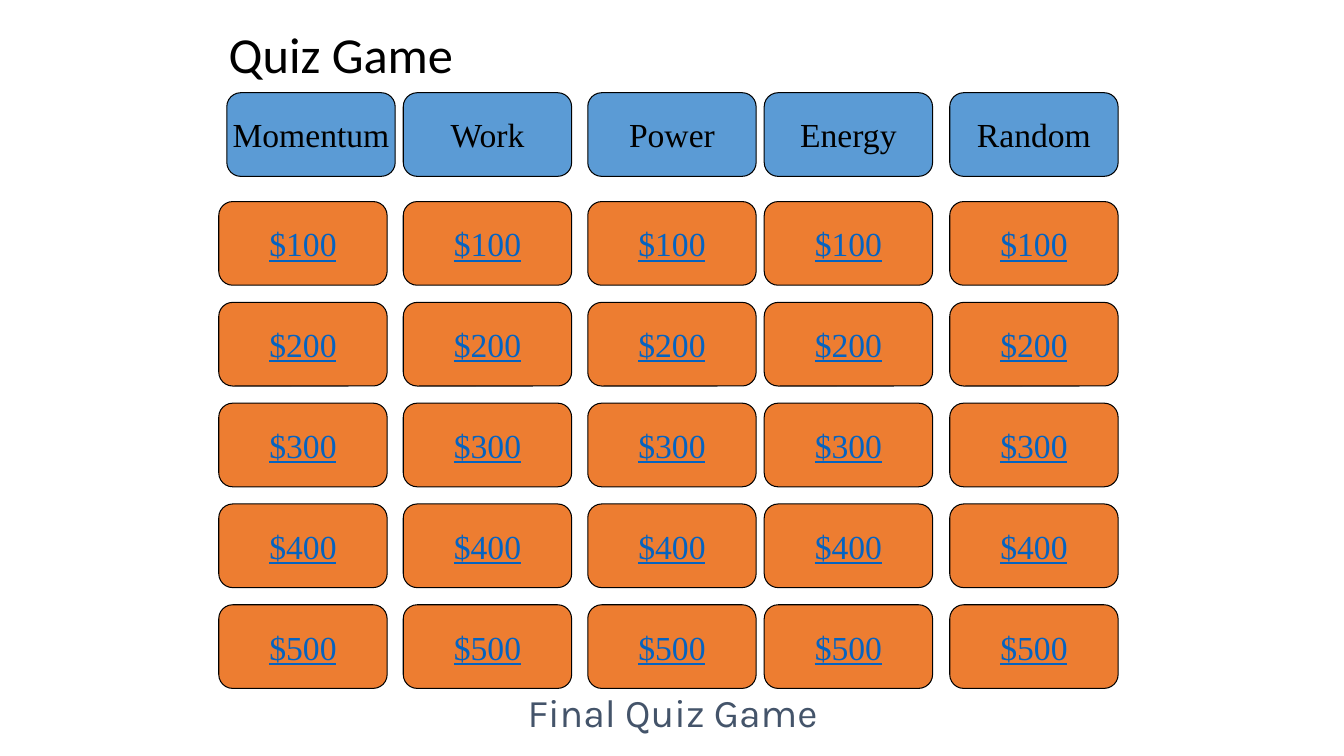
from dataclasses import dataclass

from pptx import Presentation
from pptx.dml.color import RGBColor
from pptx.enum.shapes import MSO_SHAPE
from pptx.enum.text import MSO_ANCHOR, PP_ALIGN
from pptx.slide import Slide
from pptx.text.text import TextFrame
from pptx.util import Inches, Pt

CARD_SHAPE = MSO_SHAPE.FLOWCHART_ALTERNATE_PROCESS
MIDDLE = MSO_ANCHOR.MIDDLE
LEFT = PP_ALIGN.LEFT
CENTER = PP_ALIGN.CENTER

BLACK = "000000"
CATEGORY_BLUE = "5B9BD5"
PRIZE_ORANGE = "ED7D31"
LINK_BLUE = "0563C1"
SLATE = "44546A"

CARD_WIDTH = 1.67
CARD_HEIGHT = 0.83
CATEGORY_TOP = 0.92
FIRST_PRIZE_TOP = 2
PRIZE_STEP = 1
PRIZES = ("$100", "$200", "$300", "$400", "$500")


@dataclass(frozen=True)
class Category:
    label: str
    heading_left: float
    prize_left: float


@dataclass(frozen=True)
class TextStyle:
    font: str
    size: float
    color: str
    align: PP_ALIGN = CENTER
    underline: bool = False
    line_spacing: float = 1.0


@dataclass(frozen=True)
class Caption:
    text: str
    top: float
    style: TextStyle


CATEGORIES = (
    Category("Momentum", 2.25, 2.17),
    Category("Work", 4, 4),
    Category("Power", 5.83, 5.83),
    Category("Energy", 7.58, 7.58),
    Category("Random", 9.42, 9.42),
)
HEADING_STYLE = TextStyle("Times New Roman", 24, BLACK)
PRIZE_STYLE = TextStyle("Times New Roman", 24, LINK_BLUE, underline=True)
CAPTIONS = (
    Caption("Quiz Game", 0.3,
            TextStyle("Calibri", 36, BLACK, align=LEFT, line_spacing=0.9)),
    Caption("Final Quiz Game", 6.8, TextStyle("Karla", 28, SLATE)),
)


def rgb(color: str) -> RGBColor:
    return RGBColor.from_string(color)


def write(frame: TextFrame, text: str, style: TextStyle, wrap: bool) -> None:
    frame.text = text
    frame.word_wrap = wrap
    frame.vertical_anchor = MIDDLE
    paragraph = frame.paragraphs[0]
    paragraph.alignment = style.align
    paragraph.line_spacing = style.line_spacing
    font = paragraph.runs[0].font
    font.name = style.font
    font.size = Pt(style.size)
    font.color.rgb = rgb(style.color)
    font.underline = style.underline


def draw_card(slide: Slide, left: float, top: float, fill: str,
              text: str, style: TextStyle) -> None:
    card = slide.shapes.add_shape(
        CARD_SHAPE, Inches(left), Inches(top),
        Inches(CARD_WIDTH), Inches(CARD_HEIGHT))
    card.shadow.inherit = False
    card.fill.solid()
    card.fill.fore_color.rgb = rgb(fill)
    card.line.color.rgb = rgb(BLACK)
    card.line.width = Pt(0.75)
    write(card.text_frame, text, style, wrap=False)


def draw_category(slide: Slide, category: Category) -> None:
    draw_card(slide, category.heading_left, CATEGORY_TOP, CATEGORY_BLUE,
              category.label, HEADING_STYLE)
    for row, prize in enumerate(PRIZES):
        draw_card(slide, category.prize_left, FIRST_PRIZE_TOP + row * PRIZE_STEP,
                  PRIZE_ORANGE, prize, PRIZE_STYLE)


def draw_caption(slide: Slide, caption: Caption) -> None:
    box = slide.shapes.add_textbox(
        Inches(2.17), Inches(caption.top), Inches(9), Inches(0.53))
    write(box.text_frame, caption.text, caption.style, wrap=True)


def main() -> None:
    presentation = Presentation()
    presentation.slide_width = Inches(13.33)
    presentation.slide_height = Inches(7.5)
    slide = presentation.slides.add_slide(presentation.slide_layouts[6])
    for category in CATEGORIES:
        draw_category(slide, category)
    for caption in CAPTIONS:
        draw_caption(slide, caption)
    presentation.save("out.pptx")


if __name__ == "__main__":
    main()
